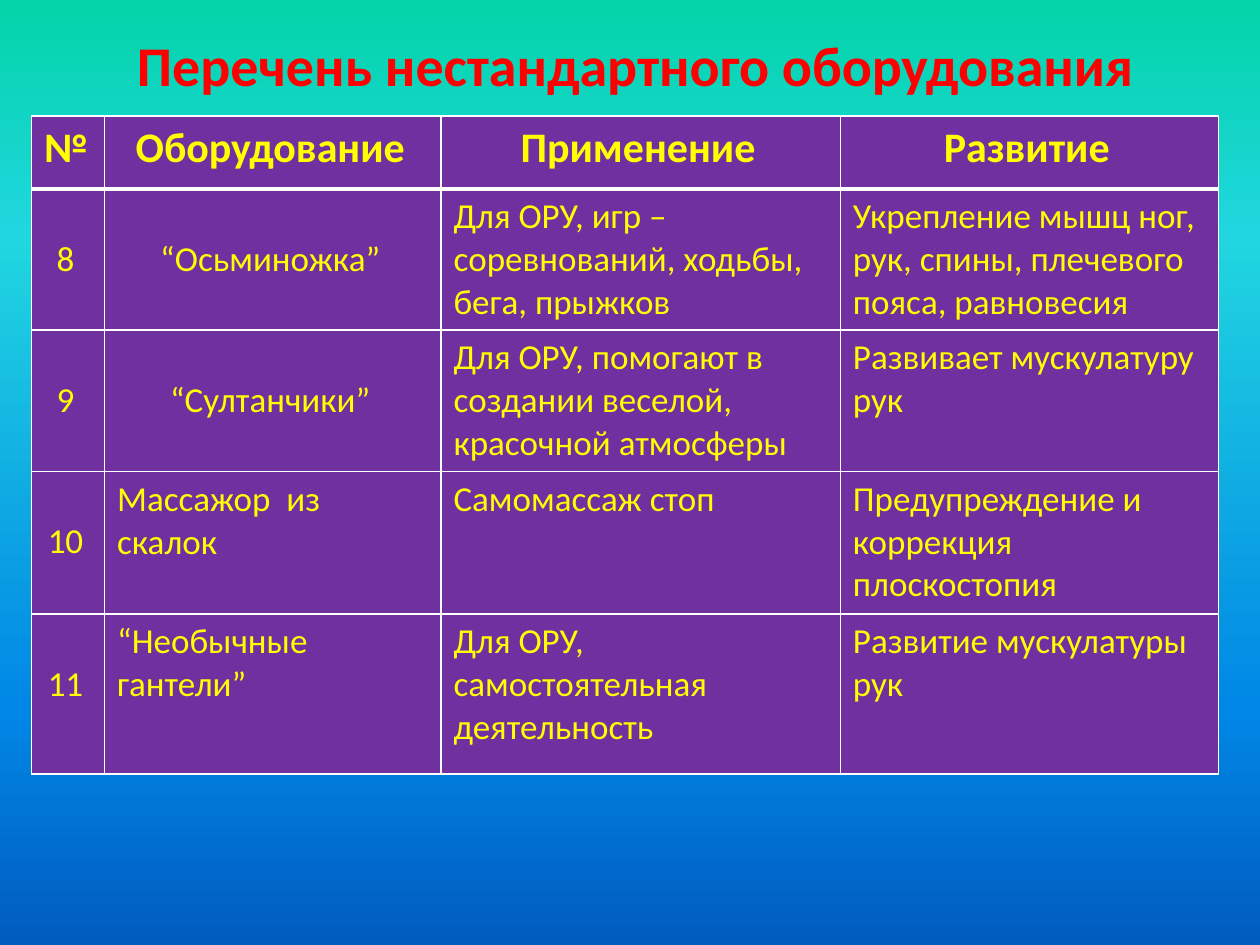
from lxml import etree
from pptx import Presentation
from pptx.dml.color import RGBColor
from pptx.enum.text import MSO_ANCHOR, PP_ALIGN
from pptx.oxml.ns import qn
from pptx.util import Inches, Pt

MIDDLE, TOP = MSO_ANCHOR.MIDDLE, MSO_ANCHOR.TOP
CENTER, LEFT = PP_ALIGN.CENTER, PP_ALIGN.LEFT
FONT = "Calibri"
COLORS = {"title": "FF0000", "text": "FFFF00", "cell": "7030A0", "border": "FFFFFF"}
BACKGROUND_STOPS = {0: "03D4A8", 25: "21D6E0", 75: "0087E6", 100: "005CBF"}
COLUMN_WIDTHS = [0.58, 2.67, 3.17, 3]
ROW_HEIGHTS = [0.58, 1.12, 1.12, 1.13, 1.27]
SECOND_LINE_TOP = 0.39
ROWS = [
    ["№", "Оборудование", "Применение", "Развитие"],
    ["8", "“Осьминожка”", "Для ОРУ, игр – соревнований, ходьбы, бега, прыжков",
     "Укрепление мышц ног, рук, спины, плечевого пояса, равновесия"],
    ["9", "“Султанчики”", "Для ОРУ, помогают в создании веселой, красочной атмосферы",
     "Развивает мускулатуру рук"],
    ["10", "Массажор  из  скалок", "Самомассаж стоп",
     "Предупреждение и коррекция плоскостопия"],
    ["11", "“Необычные гантели”", "Для ОРУ, самостоятельная деятельность",
     "Развитие мускулатуры рук"],
]


def style_paragraph(para, size, color, bold, alignment):
    para.alignment = alignment
    para.font.name = FONT
    para.font.size = Pt(size)
    para.font.bold = bold
    para.font.color.rgb = RGBColor.from_string(COLORS[color])


def add_border(cell, side, width):
    properties = cell._tc.get_or_add_tcPr()
    line = etree.SubElement(properties, qn(f"a:ln{side}"), w=str(Pt(width)))
    fill = etree.SubElement(line, qn("a:solidFill"))
    etree.SubElement(fill, qn("a:srgbClr"), val=COLORS["border"])


deck = Presentation()
deck.slide_width, deck.slide_height = Inches(10), Inches(7.5)
slide = deck.slides.add_slide(deck.slide_layouts[5])

background = slide.background.fill
background.gradient()
background.gradient_angle = 270
stop_list = slide.element.find(f".//{qn('a:gsLst')}")
for stop in list(stop_list):
    stop_list.remove(stop)
for percent, color in BACKGROUND_STOPS.items():
    stop = etree.SubElement(stop_list, qn("a:gs"), pos=str(percent * 1000))
    etree.SubElement(stop, qn("a:srgbClr"), val=color)

title = slide.shapes.title
title.left, title.top = Inches(0.42), Inches(0.17)
title.width, title.height = Inches(9.25), Inches(0.67)
title.text_frame.text = "Перечень нестандартного оборудования"
title.text_frame.vertical_anchor = MIDDLE
style_paragraph(title.text_frame.paragraphs[0], 32, "title", True, CENTER)

table = slide.shapes.add_table(
    len(ROWS), len(COLUMN_WIDTHS), Inches(0.25), Inches(0.92),
    Inches(sum(COLUMN_WIDTHS)), Inches(sum(ROW_HEIGHTS))).table
for column, width in zip(table.columns, COLUMN_WIDTHS):
    column.width = Inches(width)
for row, height in zip(table.rows, ROW_HEIGHTS):
    row.height = Inches(height)

for row_index, texts in enumerate(ROWS):
    header = row_index == 0
    for column_index, text in enumerate(texts):
        cell = table.cell(row_index, column_index)
        on_second_line = not header and (
            column_index == 0 or column_index == 1 and row_index < 3)
        centered = header or on_second_line
        cell.text = text
        cell.vertical_anchor = TOP
        cell.margin_right = Inches(0.14 if centered else 0.1)
        if on_second_line:
            cell.margin_top = Inches(SECOND_LINE_TOP)
        style_paragraph(cell.text_frame.paragraphs[0], 24 if header else 20,
                        "text", header, CENTER if centered else LEFT)
        for side in "LRTB":
            heavy = (side, row_index) in [("B", 0), ("T", 1)]
            add_border(cell, side, 3 if heavy else 1)
        cell.fill.solid()
        cell.fill.fore_color.rgb = RGBColor.from_string(COLORS["cell"])

deck.save("out.pptx")
